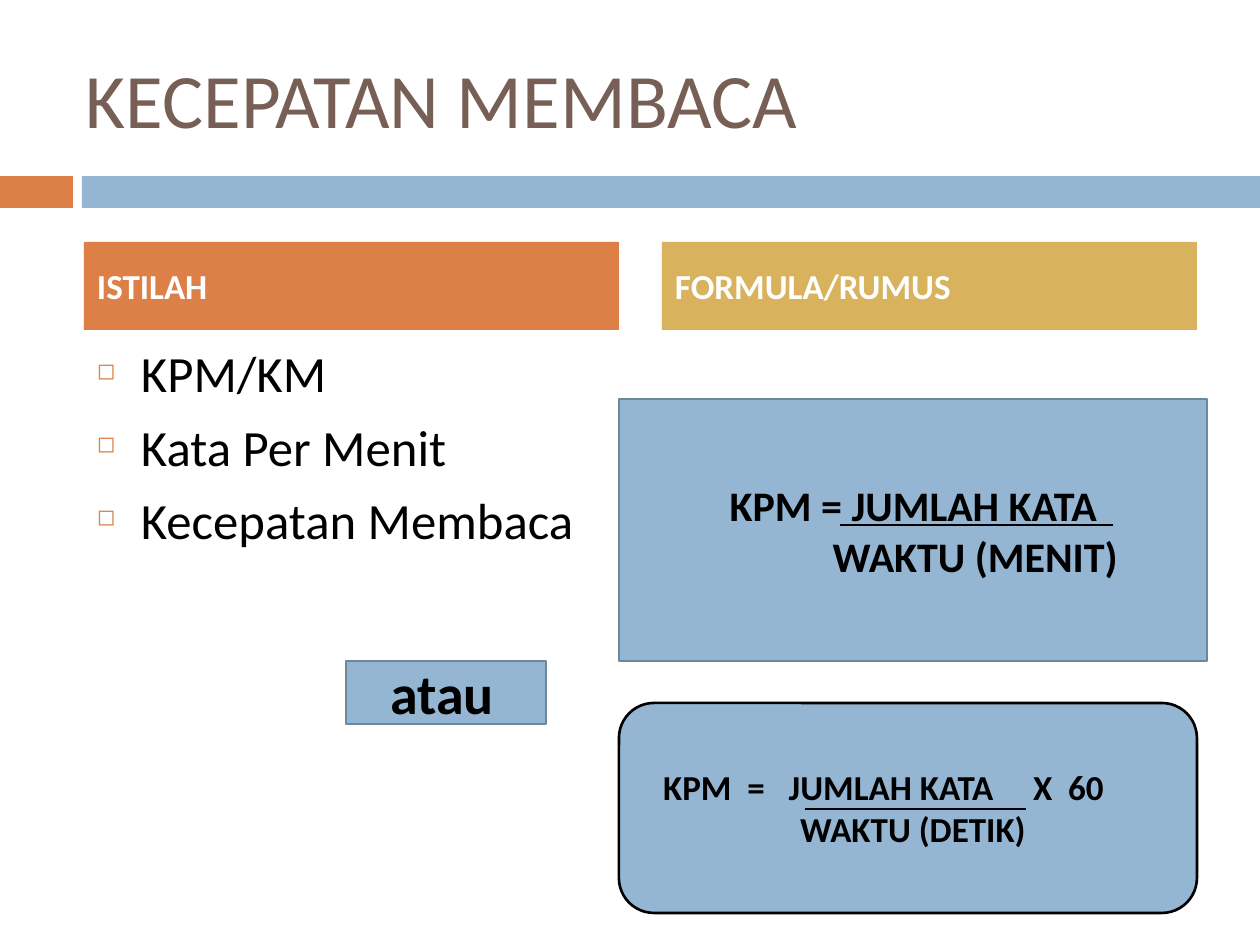
from dataclasses import dataclass, field

from lxml import etree
from pptx import Presentation
from pptx import util as u
from pptx.dml.color import RGBColor
from pptx.enum import shapes, text
from pptx.oxml import ns

SCALE = u.Inches(1) // 126
FONT = "Calibri"
SPACE_WIDTH = 0.226  # share of the text size
COLORS = {
    "orange": "DD8047",
    "blue": "94B6D2",
    "gold": "D8B25C",
    "slate": "6D879B",
    "brown": "775F55",
    "black": "000000",
    "white": "FFFFFF",
}
RECT = shapes.MSO_SHAPE.RECTANGLE
ROUNDED = shapes.MSO_SHAPE.ROUNDED_RECTANGLE
LEFT, CENTER = text.PP_ALIGN.LEFT, text.PP_ALIGN.CENTER
TOP, MIDDLE = text.MSO_ANCHOR.TOP, text.MSO_ANCHOR.MIDDLE


@dataclass
class Gap:
    """A space as wide as several, followed by more words."""
    spaces: int
    words: str


@dataclass
class Line:
    words: str
    indent: int = 0
    gaps: tuple[Gap, ...] = ()


@dataclass
class Panel:
    """A block of text, filled and outlined when colours are given."""
    at: tuple[int, int, int, int]
    lines: list[Line] = field(default_factory=list)
    size: int = 20
    fill: str | None = None
    outline: str | None = None
    color: str = "black"
    bold: bool = True
    align: text.PP_ALIGN = LEFT
    anchor: text.MSO_ANCHOR = MIDDLE
    shape: shapes.MSO_SHAPE = RECT
    inset: int = 13
    bullet: str | None = None


@dataclass
class FractionBar:
    left: int
    right: int
    y: int


def px(length: int) -> int:
    return u.Emu(length * SCALE)


def rgb(name: str) -> RGBColor:
    return RGBColor.from_string(COLORS[name])


def add_gap(para, gap: Gap, size: int) -> None:
    space = para.add_run()
    space.text = " "
    extra = (gap.spaces - 1) * SPACE_WIDTH * size
    space._r.get_or_add_rPr().set("spc", str(round(extra * 100)))
    para.add_run().text = gap.words


def add_bullet(props, bullet: str) -> None:
    color = etree.SubElement(props, ns.qn("a:buClr"))
    etree.SubElement(color, ns.qn("a:srgbClr"), val=COLORS["orange"])
    etree.SubElement(props, ns.qn("a:buSzPct"), val="45000")
    etree.SubElement(props, ns.qn("a:buChar"), char=bullet)


def write_line(para, line: Line, panel: Panel, first: bool) -> None:
    para.text = line.words
    para.alignment = panel.align
    props = para._p.get_or_add_pPr()
    props.set("marL", str(px(line.indent)))
    props.set("indent", str(px(-line.indent if panel.bullet else 0)))
    if panel.bullet:
        para.space_before = u.Pt(0 if first else 7)
        add_bullet(props, panel.bullet)
    for gap in line.gaps:
        add_gap(para, gap, panel.size)
    for span in para.runs:
        span.font.name = FONT
        span.font.size = u.Pt(panel.size)
        span.font.bold = panel.bold
        span.font.color.rgb = rgb(panel.color)


def draw_panel(page, panel: Panel) -> None:
    place = [px(length) for length in panel.at]
    if panel.fill:
        box = page.shapes.add_shape(panel.shape, *place)
        box.shadow.inherit = False
        box.fill.solid()
        box.fill.fore_color.rgb = rgb(panel.fill)
        if panel.outline:
            box.line.color.rgb = rgb(panel.outline)
            box.line.width = u.Pt(1.5)
        else:
            box.line.fill.background()
    else:
        box = page.shapes.add_textbox(*place)
    frame = box.text_frame
    frame.word_wrap = True
    frame.vertical_anchor = panel.anchor
    frame.margin_left = px(panel.inset)
    for number, line in enumerate(panel.lines):
        para = frame.add_paragraph() if number else frame.paragraphs[0]
        write_line(para, line, panel, first=number == 0)


def draw_bar(page, bar: FractionBar) -> None:
    rule = page.shapes.add_connector(
        shapes.MSO_CONNECTOR.STRAIGHT,
        px(bar.left), px(bar.y), px(bar.right), px(bar.y))
    rule.line.color.rgb = rgb("black")
    rule.line.width = u.Pt(0.8)
    etree.SubElement(rule._element.spPr, ns.qn("a:effectLst"))


TERMS = ["KPM/KM", "Kata Per Menit", "Kecepatan Membaca"]
SECONDS_FORMULA = Line(
    "KPM", gaps=(Gap(2, "="), Gap(3, "JUMLAH KATA"), Gap(5, "X"), Gap(2, "60")))
PANELS = [
    Panel((0, 176, 73, 32), fill="orange"),
    Panel((82, 176, 1178, 32), fill="blue"),
    Panel((73, 38, 1124, 120), [Line("KECEPATAN MEMBACA")],
          size=44, color="brown", bold=False),
    Panel((84, 336, 535, 494), [Line(term, indent=44) for term in TERMS],
          size=29, bold=False, anchor=TOP, bullet="◻"),
    Panel((84, 242, 535, 88), [Line("ISTILAH")], fill="orange", color="white"),
    Panel((662, 242, 535, 88), [Line("FORMULA/RUMUS")], fill="gold", color="white"),
    Panel((619, 399, 588, 262),
          [Line("KPM = JUMLAH KATA"), Line("WAKTU (MENIT)", indent=124)],
          size=24, fill="blue", outline="slate", align=CENTER),
    Panel((619, 703, 578, 210),
          [SECONDS_FORMULA, Line("WAKTU (DETIK)", indent=137)],
          fill="blue", outline="black", shape=ROUNDED, inset=34),
    Panel((346, 661, 200, 63), [Line("atau")],
          size=32, fill="blue", outline="slate", align=CENTER, inset=5),
]
BARS = [FractionBar(840, 1113, 525), FractionBar(805, 1026, 809)]


def main() -> None:
    deck = Presentation()
    deck.slide_width, deck.slide_height = px(1260), px(945)
    page = deck.slides.add_slide(deck.slide_layouts[6])
    for panel in PANELS:
        draw_panel(page, panel)
    for bar in BARS:
        draw_bar(page, bar)
    deck.save("out.pptx")


if __name__ == "__main__":
    main()
